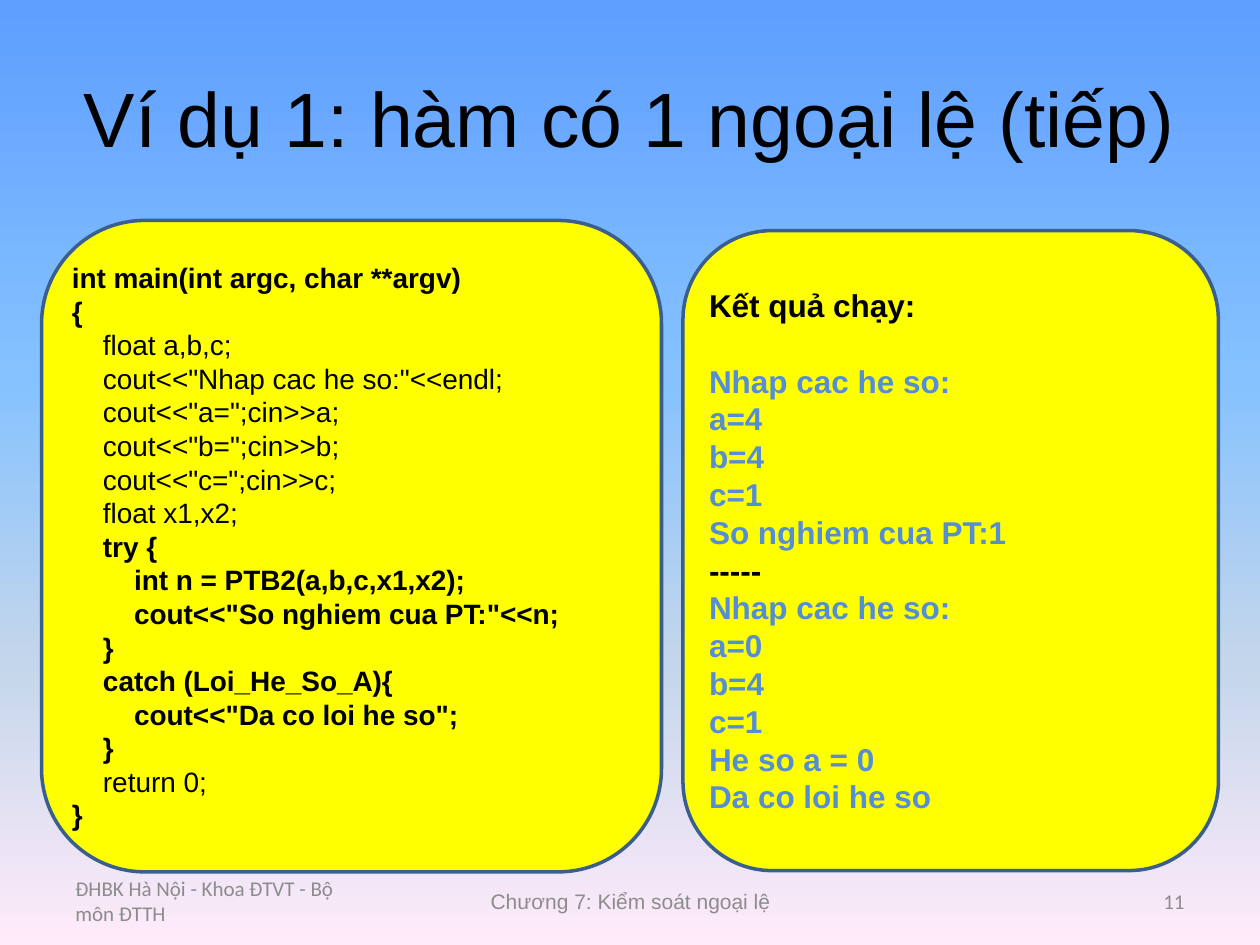
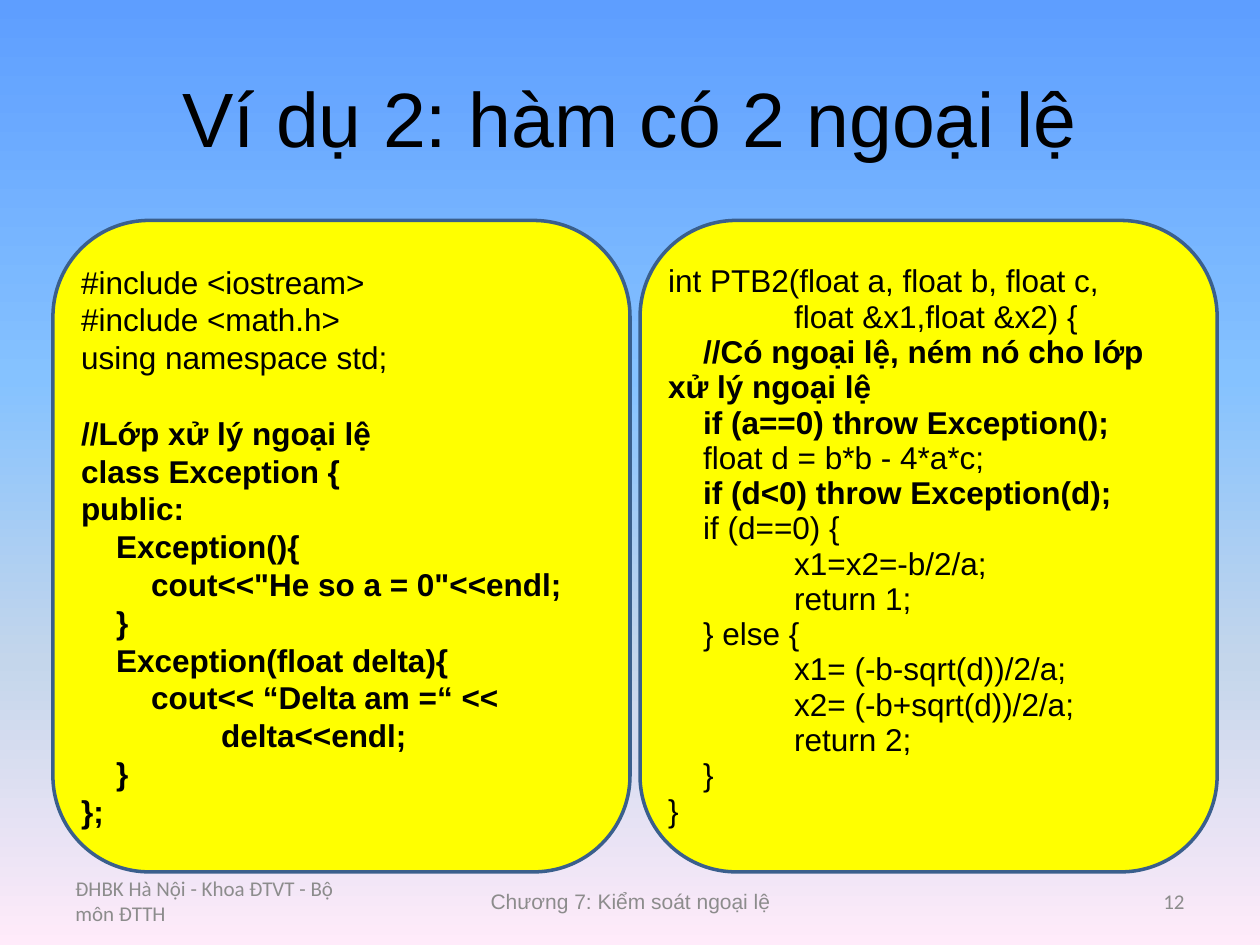
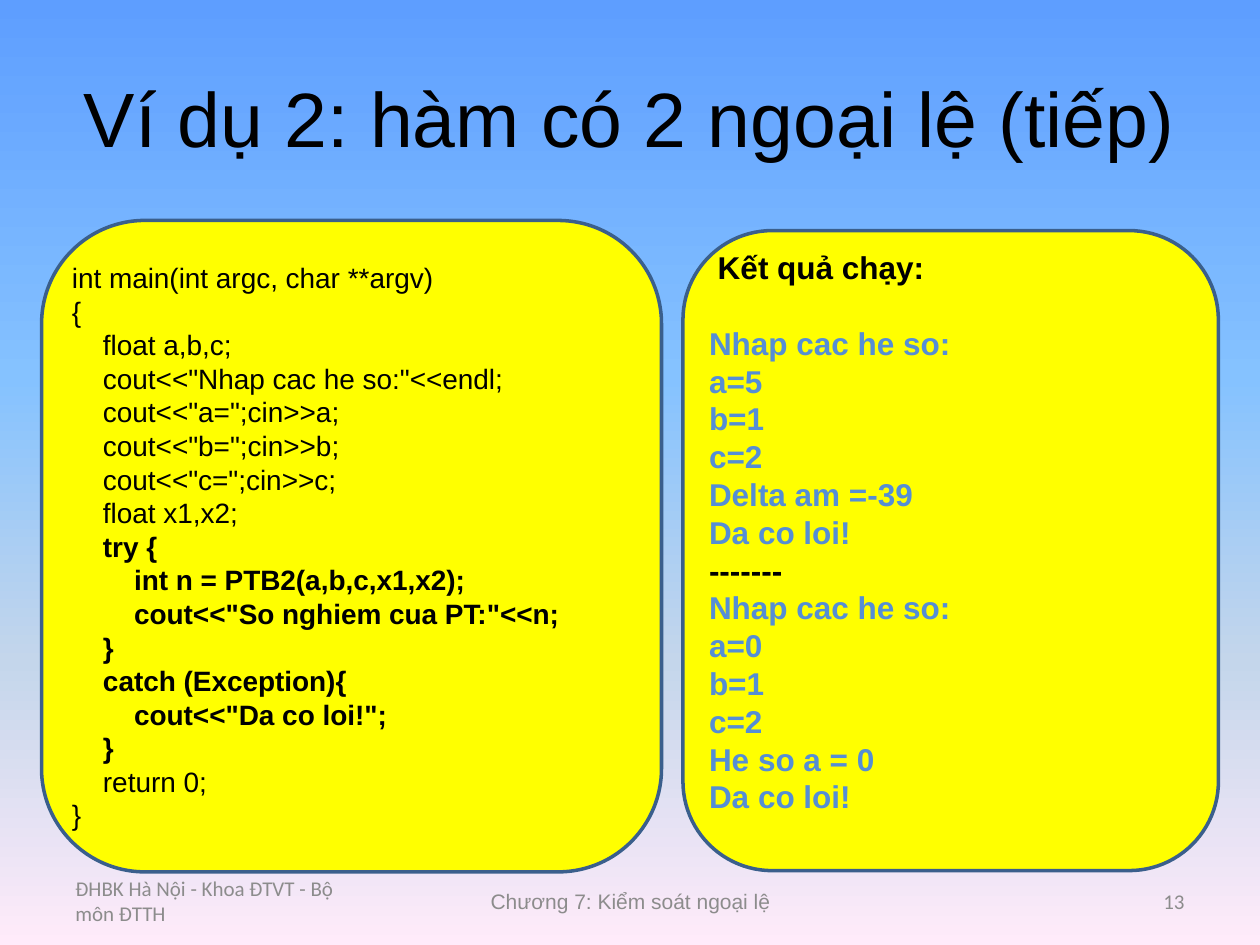
from pptx import Presentation
from pptx.dml.color import RGBColor
from pptx.enum.shapes import MSO_SHAPE
from pptx.enum.text import MSO_ANCHOR, MSO_AUTO_SIZE, PP_ALIGN
from pptx.oxml.ns import qn
from pptx.util import Inches, Pt
from lxml.etree import SubElement

INK = RGBColor(0x00, 0x00, 0x00)
BLUE = RGBColor(0x55, 0x8E, 0xD5)
GRAY = RGBColor(0x8C, 0x8C, 0x8C)
YELLOW = RGBColor(0xFF, 0xFF, 0x00)
EDGE = RGBColor(0x3A, 0x5F, 0x8C)
SKY = [(0, RGBColor(0x5E, 0x9E, 0xFF)), (40, RGBColor(0x85, 0xC2, 0xFF)),
       (70, RGBColor(0xC4, 0xD6, 0xEB)), (100, RGBColor(0xFF, 0xEB, 0xFA))]

PLAIN = {"bold": False, "color": INK}
BOLD = {"bold": True, "color": INK}
OUT = {"bold": True, "color": BLUE}
SPACE = 0.278

FOOT = [
    (0.5, 2.33, PP_ALIGN.LEFT, "Calibri", "ĐHBK Hà Nội - Khoa ĐTVT - Bộ môn ĐTTH"),
    (3.42, 3.17, PP_ALIGN.CENTER, "Arial", "Chương 7: Kiểm soát ngoại lệ"),
    (7.17, 2.33, PP_ALIGN.RIGHT, "Calibri", "{page}"),
]

OPEN = """int main(int argc, char **argv)
{"""
READ = """    float a,b,c;
    cout<<"Nhap cac he so:"<<endl;
    cout<<"a=";cin>>a;
    cout<<"b=";cin>>b;
    cout<<"c=";cin>>c;
    float x1,x2;"""
GUARD = """    try {{
        int n = PTB2(a,b,c,x1,x2);
        cout<<"So nghiem cua PT:"<<n;
    }}
    catch ({kind}){{
        cout<<"{note}";
    }}"""

CLASS = [
    (PLAIN, """#include <iostream>
#include <math.h>
using namespace std;
"""),
    (BOLD, """//Lớp xử lý ngoại lệ
class Exception {
public:
    Exception(){
        cout<<"He so a = 0"<<endl;
    }
    Exception(float delta){
        cout<< “Delta am =“ <<
                delta<<endl;
    }
};"""),
]
SOLVE = [
    (PLAIN, """int PTB2(float a, float b, float c,
\tfloat &x1,float &x2) {"""),
    (BOLD, """    //Có ngoại lệ, ném nó cho lớp xử lý ngoại lệ
    if (a==0) throw Exception();"""),
    (PLAIN, "    float d = b*b - 4*a*c;"),
    (BOLD, "    if (d<0) throw Exception(d);"),
    (PLAIN, """    if (d==0) {
\tx1=x2=-b/2/a;
\treturn 1;
    } else {
\tx1= (-b-sqrt(d))/2/a;
\tx2= (-b+sqrt(d))/2/a;
\treturn 2;
    }
}"""),
]


def style(font, form):
    """Set font attributes from a dict of format values."""
    for key, value in form.items():
        if key == "color":
            font.color.rgb = value
        else:
            setattr(font, key, value)


def setup(frame, **form):
    """Set text frame attributes over shared defaults."""
    base = {"word_wrap": True, "auto_size": MSO_AUTO_SIZE.NONE,
            "vertical_anchor": MSO_ANCHOR.MIDDLE}
    for key, value in (base | form).items():
        setattr(frame, key, value)


def place(shape, left, top, width, height):
    """Move and size a shape, in inches."""
    box = {"left": left, "top": top, "width": width, "height": height}
    for key, value in box.items():
        setattr(shape, key, Inches(value))


def paint(master):
    """Give the master its sky gradient."""
    fill = master.background.fill
    fill.gradient()
    fill.gradient_angle = 270
    stops = master.element.find(".//" + qn("a:gsLst"))
    for stop in list(stops):
        stops.remove(stop)
    for pos, color in SKY:
        stop = SubElement(stops, qn("a:gs"), pos=str(pos * 1000))
        SubElement(stop, qn("a:srgbClr"), val=str(color))


def label(frame, text, align, form):
    """Write one aligned paragraph."""
    para = frame.paragraphs[0]
    para.alignment = align
    run = para.add_run()
    run.text = text
    style(run.font, form)


def footer(slide, page):
    """Add the three footer texts."""
    for left, width, align, name, text in FOOT:
        box = slide.shapes.add_textbox(0, 0, 0, 0)
        place(box, left, 6.95, width, 0.4)
        setup(box.text_frame)
        form = {"name": name, "size": Pt(12), "color": GRAY}
        label(box.text_frame, text.format(page=page), align, form)


def write(frame, parts, size, pitch):
    """Write code lines, turning leading blanks into indents."""
    lines = [(form, line) for form, text in parts for line in text.split("\n")]
    para, gap = frame.paragraphs[0], 0
    for form, line in lines:
        if not line:
            gap = size * pitch
            continue
        if para.runs:
            para = frame.add_paragraph()
        code = line.lstrip() if line.startswith(("  ", "\t")) else line
        lead = line[:len(line) - len(code)]
        indent = Inches(lead.count("\t")) + Pt(lead.count(" ") * SPACE * size)
        props = para._p.get_or_add_pPr()
        props.set("marL", "0")
        props.set("indent", str(int(indent)))
        para.alignment = PP_ALIGN.LEFT
        para.line_spacing = Pt(size * pitch)
        para.space_before, gap = Pt(gap), 0
        run = para.add_run()
        run.text = code
        style(run.font, {"name": "Arial", "size": Pt(size)} | form)


def panel(slide, box, parts, size=18, pitch=1.2, low=0.05):
    """Add a yellow rounded panel of code."""
    shape = slide.shapes.add_shape(MSO_SHAPE.ROUNDED_RECTANGLE, 0, 0, 0, 0)
    place(shape, *box)
    shape.shadow.inherit = False
    shape.fill.solid()
    shape.fill.fore_color.rgb = YELLOW
    shape.line.color.rgb = EDGE
    shape.line.width = Pt(2)
    setup(shape.text_frame, margin_left=0, margin_right=0,
          margin_top=Inches(0.05), margin_bottom=Inches(low))
    write(shape.text_frame, parts, size, pitch)


def start(deck, title, page):
    """Add a slide with its title and footer."""
    slide = deck.slides.add_slide(deck.slide_layouts[5])
    head = slide.shapes.title
    place(head, 0.5, 0.3, 9, 1.25)
    setup(head.text_frame)
    form = {"name": "Arial", "size": Pt(44), "color": INK}
    label(head.text_frame, title, PP_ALIGN.CENTER, form)
    footer(slide, page)
    return slide


def demo(slide, ends, kind, note, result, low=0.05):
    """Add the main program beside its output."""
    first, last = ends
    code = [(first, OPEN), (PLAIN, READ),
            (BOLD, GUARD.format(kind=kind, note=note)),
            (PLAIN, "    return 0;"), (last, "}")]
    panel(slide, (0.33, 1.75, 4.92, 5.17), code, size=16)
    panel(slide, (5.42, 1.83, 4.25, 5.08), result, low=low)


def trial(a, b, c, *tail):
    """Return the output of one program run."""
    return OUT, "\n".join(["Nhap cac he so:", f"a={a}", f"b={b}", f"c={c}", *tail])


def main():
    """Build the deck."""
    deck = Presentation()
    deck.slide_width, deck.slide_height = Inches(10), Inches(7.5)
    paint(deck.slide_master)

    slide = start(deck, "Ví dụ 1: hàm có 1 ngoại lệ (tiếp)", 11)
    demo(slide, (BOLD, BOLD), "Loi_He_So_A", "Da co loi he so", [
        (BOLD, "Kết quả chạy:\n"),
        trial(4, 4, 1, "So nghiem cua PT:1"),
        (BOLD, "-----"),
        trial(0, 4, 1, "He so a = 0", "Da co loi he so")])

    slide = start(deck, "Ví dụ 2: hàm có 2 ngoại lệ", 12)
    panel(slide, (0.42, 1.75, 4.58, 5.17), CLASS)
    panel(slide, (5.08, 1.75, 4.58, 5.17), SOLVE, pitch=1.12)

    slide = start(deck, "Ví dụ 2: hàm có 2 ngoại lệ (tiếp)", 13)
    demo(slide, (PLAIN, PLAIN), "Exception", "Da co loi!", [
        (BOLD, " Kết quả chạy:\n"),
        trial(5, 1, 2, "Delta am =-39", "Da co loi!"),
        (BOLD, "-------"),
        trial(0, 1, 2, "He so a = 0", "Da co loi!")], low=0.35)

    deck.save("out.pptx")


if __name__ == "__main__":
    main()
